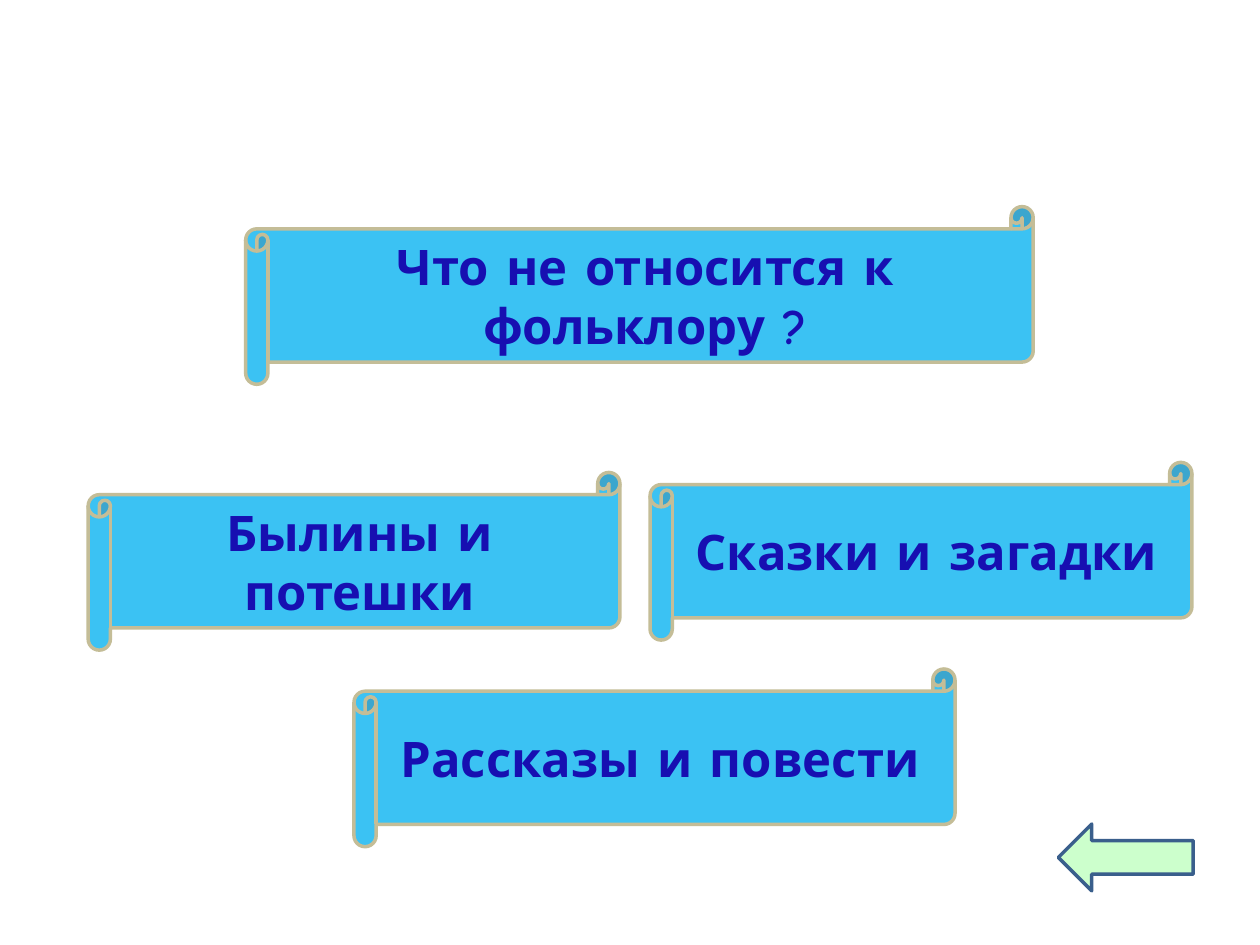
from dataclasses import dataclass

from lxml import etree
from pptx import Presentation
from pptx.dml.color import RGBColor
from pptx.enum.shapes import MSO_SHAPE
from pptx.enum.text import MSO_ANCHOR, PP_ALIGN
from pptx.oxml.ns import qn
from pptx.util import Inches, Pt

SCROLL = MSO_SHAPE.HORIZONTAL_SCROLL
LEFT_ARROW = MSO_SHAPE.LEFT_ARROW
MIDDLE = MSO_ANCHOR.MIDDLE
CENTER = PP_ALIGN.CENTER


@dataclass(frozen=True)
class Theme:
    font: str = "Comic Neue"
    text_size: float = 28
    text: str = "170FB1"
    scroll_fill: str = "00B0F0"
    scroll_opacity: int = 77
    scroll_line: str = "C4BD97"
    arrow_fill: str = "CCFFCC"
    arrow_line: str = "3A5F8C"
    line_width: float = 2
    scroll_height: float = 1.41


@dataclass(frozen=True)
class Scroll:
    text: str
    left: float
    top: float
    width: float


THEME = Theme()

ANSWERS = [
    Scroll("Сказки и загадки", 5.16, 3.67, 4.3),
    Scroll("Рассказы и повести", 2.81, 5.31, 4.77),
    Scroll("Былины и потешки", 0.7, 3.75, 4.22),
]
QUESTION = Scroll("Что не относится к фольклору ?", 1.95, 1.64, 6.25)


def add_outlined_shape(page, kind, left: float, top: float, width: float,
                       height: float, fill: str, line: str):
    shape = page.shapes.add_shape(
        kind, Inches(left), Inches(top), Inches(width), Inches(height))
    shape.shadow.inherit = False
    shape.fill.solid()
    shape.fill.fore_color.rgb = RGBColor.from_string(fill)
    shape.line.color.rgb = RGBColor.from_string(line)
    shape.line.width = Pt(THEME.line_width)
    return shape


def set_opacity(shape, percent: int) -> None:
    color = shape._element.spPr.find(qn("a:solidFill"))[0]
    etree.SubElement(color, qn("a:alpha"), val=str(percent * 1000))


def add_scroll(page, scroll: Scroll) -> None:
    shape = add_outlined_shape(
        page, SCROLL, scroll.left, scroll.top, scroll.width,
        THEME.scroll_height, THEME.scroll_fill, THEME.scroll_line)
    set_opacity(shape, THEME.scroll_opacity)

    frame = shape.text_frame
    frame.word_wrap = True
    frame.vertical_anchor = MIDDLE
    para = frame.paragraphs[0]
    para.text = scroll.text
    para.alignment = CENTER
    para.font.name = THEME.font
    para.font.size = Pt(THEME.text_size)
    para.font.bold = True
    para.font.color.rgb = RGBColor.from_string(THEME.text)


def main() -> None:
    deck = Presentation()
    deck.slide_width, deck.slide_height = Inches(10), Inches(7.5)
    page = deck.slides.add_slide(deck.slide_layouts[6])

    # Answers and the question above them
    for scroll in [*ANSWERS, QUESTION]:
        add_scroll(page, scroll)

    # Back arrow
    add_outlined_shape(page, LEFT_ARROW, 8.4, 6.54, 1.07, 0.53,
                       THEME.arrow_fill, THEME.arrow_line)

    deck.save("out.pptx")


if __name__ == "__main__":
    main()
